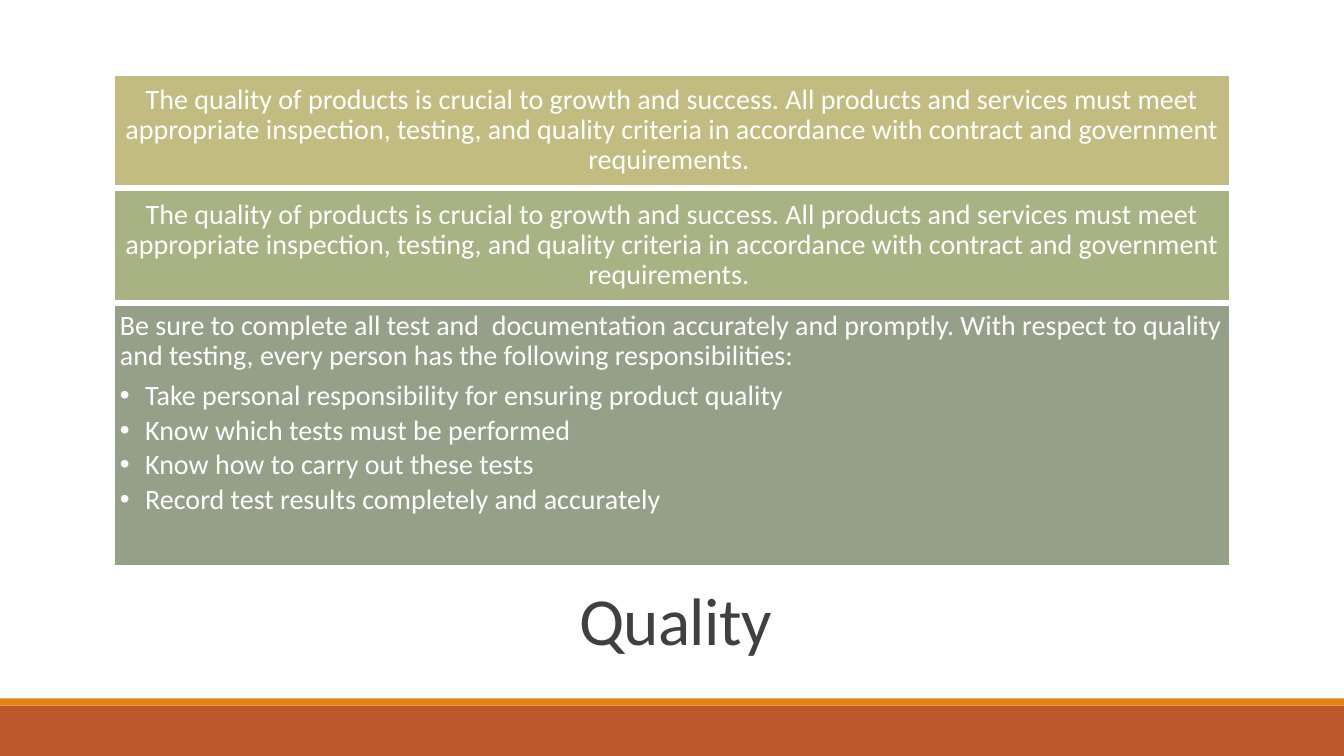
"""Build the Quality slide: three stacked text panels above a title and footer bands."""
from lxml.etree import SubElement
from pptx import Presentation
from pptx.dml.color import RGBColor
from pptx.enum.shapes import MSO_SHAPE
from pptx.enum.text import MSO_ANCHOR, PP_ALIGN
from pptx.oxml.ns import qn
from pptx.util import Inches, Pt

TITLE = "Quality"
STATEMENT = (
    "The quality of products is crucial to growth and success. All products and "
    "services must meet appropriate inspection, testing, and quality criteria in "
    "accordance with contract and government requirements. "
)
INTRODUCTION = (
    "Be sure to complete all test and  documentation accurately and promptly. With "
    "respect to quality and testing, every person has the following responsibilities:"
)
RESPONSIBILITIES = [
    "Take personal responsibility for ensuring product quality",
    "Know which tests must be performed",
    "Know how to carry out these tests",
    "Record test results completely and accurately",
]
COLORS = {
    "white": "FFFFFF", "title": "404040", "rust": "BD582C", "orange": "E48312",
    "sand": "C2BC80", "olive": "A8B283", "sage": "94A088",
}
PANELS = [
    ("sand", 1.09, STATEMENT, []),
    ("olive", 1.09, STATEMENT, []),
    ("sage", 2.58, INTRODUCTION, RESPONSIBILITIES),
]
BANDS = [("rust", 7, 0.5), ("orange", 6.93, 0.07)]
SLIDE_WIDTH, SLIDE_HEIGHT = 13.33, 7.5
PANEL_LEFT, PANEL_TOP, PANEL_WIDTH, PANEL_GAP = 1.13, 0.75, 11.07, 0.05
FONT = "Calibri"


def color(name):
    return RGBColor.from_string(COLORS[name])


def add_box(slide, left, top, width, height, fill):
    shape = slide.shapes.add_shape(
        MSO_SHAPE.RECTANGLE, Inches(left), Inches(top), Inches(width), Inches(height))
    shape.shadow.inherit = False
    shape.fill.solid()
    shape.fill.fore_color.rgb = color(fill)
    shape.line.fill.background()
    return shape


def format_paragraph(paragraph, size, ink, alignment, spacing):
    paragraph.font.name = FONT
    paragraph.font.size = Pt(size)
    paragraph.font.color.rgb = color(ink)
    paragraph.alignment = alignment
    paragraph.line_spacing = spacing


def add_bullet(paragraph):
    properties = paragraph._p.get_or_add_pPr()
    properties.set("marL", str(Inches(0.25)))
    properties.set("indent", str(-Inches(0.25)))
    SubElement(properties, qn("a:buFont")).set("typeface", "Arial")
    SubElement(properties, qn("a:buChar")).set("char", "•")


def add_panel(slide, top, height, fill, opening, bullets):
    shape = add_box(slide, PANEL_LEFT, top, PANEL_WIDTH, height, fill)
    shape.line.color.rgb = color("white")
    shape.line.width = Pt(1.25)
    frame = shape.text_frame
    frame.word_wrap = True
    frame.margin_left = frame.margin_right = Inches(0.06)
    frame.margin_top = frame.margin_bottom = Inches(0.06)
    frame.vertical_anchor = MSO_ANCHOR.TOP if bullets else MSO_ANCHOR.MIDDLE
    alignment = PP_ALIGN.LEFT if bullets else PP_ALIGN.CENTER
    for index, text in enumerate([opening, *bullets]):
        paragraph = frame.add_paragraph() if index else frame.paragraphs[0]
        paragraph.text = text
        format_paragraph(paragraph, 20, "white", alignment, 0.9)
        paragraph.space_after = Pt(3 if index else 7)
        if index:
            paragraph.level = 1
            add_bullet(paragraph)


def add_title(slide):
    title = slide.shapes.title
    title.left, title.top = Inches(1.2), Inches(5.8)
    title.width, title.height = Inches(11), Inches(0.8)
    title.text_frame.text = TITLE
    title.text_frame.vertical_anchor = MSO_ANCHOR.MIDDLE
    paragraph = title.text_frame.paragraphs[0]
    format_paragraph(paragraph, 48, "title", PP_ALIGN.CENTER, 0.85)
    paragraph.runs[0].font._element.set("spc", "-50")


def main():
    presentation = Presentation()
    presentation.slide_width = Inches(SLIDE_WIDTH)
    presentation.slide_height = Inches(SLIDE_HEIGHT)
    slide = presentation.slides.add_slide(presentation.slide_layouts[5])
    for fill, top, height in BANDS:
        add_box(slide, 0, top, SLIDE_WIDTH, height, fill)
    add_title(slide)
    top = PANEL_TOP
    for fill, height, opening, bullets in PANELS:
        add_panel(slide, top, height, fill, opening, bullets)
        top += height + PANEL_GAP
    presentation.save("out.pptx")


if __name__ == "__main__":
    main()
